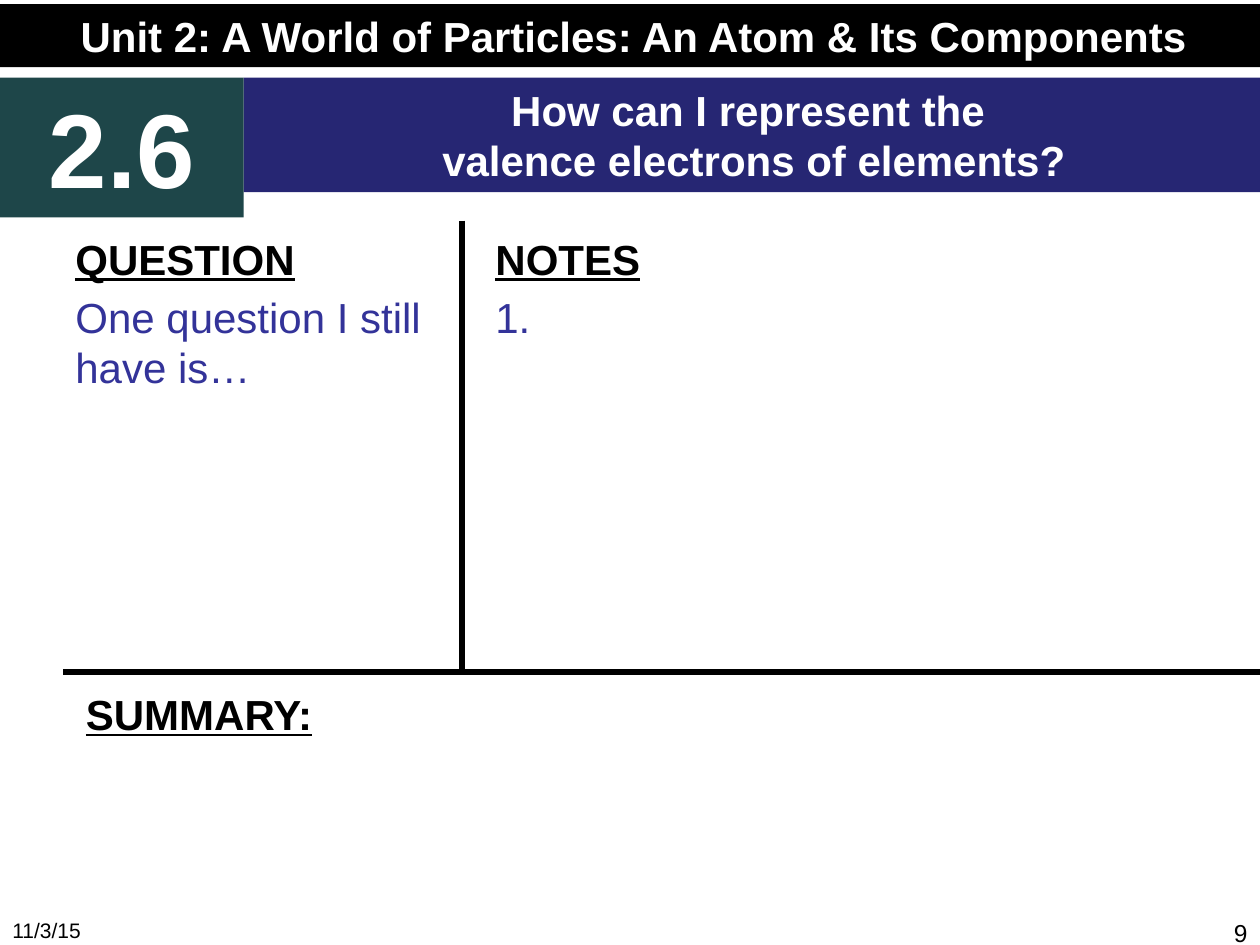
from pptx import Presentation
from pptx.dml.color import RGBColor
from pptx.enum.shapes import MSO_CONNECTOR, MSO_SHAPE
from pptx.enum.text import MSO_ANCHOR, MSO_AUTO_SIZE, PP_ALIGN
from pptx.oxml.ns import qn
from pptx.util import Inches, Pt

STRAIGHT, RECTANGLE = MSO_CONNECTOR.STRAIGHT, MSO_SHAPE.RECTANGLE
TOP, GROW, FIXED = MSO_ANCHOR.TOP, MSO_AUTO_SIZE.SHAPE_TO_FIT_TEXT, MSO_AUTO_SIZE.NONE
LEFT, CENTER, RIGHT = PP_ALIGN.LEFT, PP_ALIGN.CENTER, PP_ALIGN.RIGHT
TITLE_ONLY = 5

THEME = {
    "font": "Arial",
    "black": RGBColor.from_string("000000"),
    "white": RGBColor.from_string("FFFFFF"),
    "teal": RGBColor.from_string("1E4649"),
    "navy": RGBColor.from_string("262673"),
    "prompt": RGBColor.from_string("333399"),
    "text": Pt(24),
    "lesson": Pt(60),
    "date": Pt(12),
    "page": Pt(14),
    "gap": Pt(4.5),
    "rule": Pt(3),
}

prs = Presentation()
prs.slide_width, prs.slide_height = Inches(10), Inches(7.5)
COL, ROW = prs.slide_width / 60, prs.slide_height / 45
slide = prs.slides.add_slide(prs.slide_layouts[TITLE_ONLY])
shapes = slide.shapes


def grid(left, top, width, height):
    """Turn columns and rows into slide lengths."""
    return round(left * COL), round(top * ROW), round(width * COL), round(height * ROW)


def write(shape, text, size, color, align=LEFT, bold=False, fit=FIXED):
    frame = shape.text_frame
    frame.text = text
    frame.word_wrap, frame.auto_size, frame.vertical_anchor = True, fit, TOP
    for paragraph in frame.paragraphs:
        paragraph.alignment = align
        for run in paragraph.runs:
            font = run.font
            font.name, font.size, font.bold = THEME["font"], THEME[size], bold
            font.color.rgb = THEME[color]


# Footer
footers = [("11/3/15", 0, "date", LEFT), ("9", 46, "page", RIGHT)]
for text, column, size, align in footers:
    write(shapes.add_textbox(*grid(column, 43.4, 14, 1.6)), text, size, "black", align)

# Header bands
unit_band = shapes.add_shape(RECTANGLE, *grid(0, 0.2, 60.35, 3))
lesson_band = shapes.add_shape(RECTANGLE, *grid(0, 3.7, 11.6, 6.65))
question_band = shapes.title
(question_band.left, question_band.top,
 question_band.width, question_band.height) = grid(11.6, 3.7, 48.6, 5.45)

bands = [
    (unit_band, "black", "text", "Unit 2: A World of Particles: An Atom & Its Components"),
    (lesson_band, "teal", "lesson", "2.6"),
    (question_band, "navy", "text",
     "How can I represent the \nvalence electrons of elements?"),
]
for band, fill, size, text in bands:
    band.fill.solid()
    band.fill.fore_color.rgb = THEME[fill]
    band.line.fill.background()
    write(band, text, size, "white", CENTER, bold=True, fit=GROW)
for band in (unit_band, lesson_band):
    band.shadow.inherit = False

# Note-taking areas: an underlined heading, then an optional prompt
areas = [
    ("QUESTION\nOne question I still have is…", grid(3, 10.8, 19, 20.7)),
    ("SUMMARY:", grid(3.5, 32.5, 56.5, 12.5)),
    ("NOTES\n1.", grid(23, 10.8, 37, 20.7)),
]
for text, place in areas:
    area = shapes.add_textbox(*place)
    write(area, text, "text", "prompt")
    heading, *prompts = area.text_frame.paragraphs
    heading_font = heading.runs[0].font
    heading_font.bold = heading_font.underline = True
    heading_font.color.rgb = THEME["black"]
    for prompt in prompts:
        prompt.space_before = THEME["gap"]

# Rules between the areas
for ends in (grid(22, 10.5, 22, 32), grid(60, 32, 3, 32)):
    rule = shapes.add_connector(STRAIGHT, *ends)
    rule.line.color.rgb, rule.line.width = THEME["black"], THEME["rule"]
    rule.element.spPr.append(rule.element.spPr.makeelement(qn("a:effectLst"), {}))

prs.save("out.pptx")
